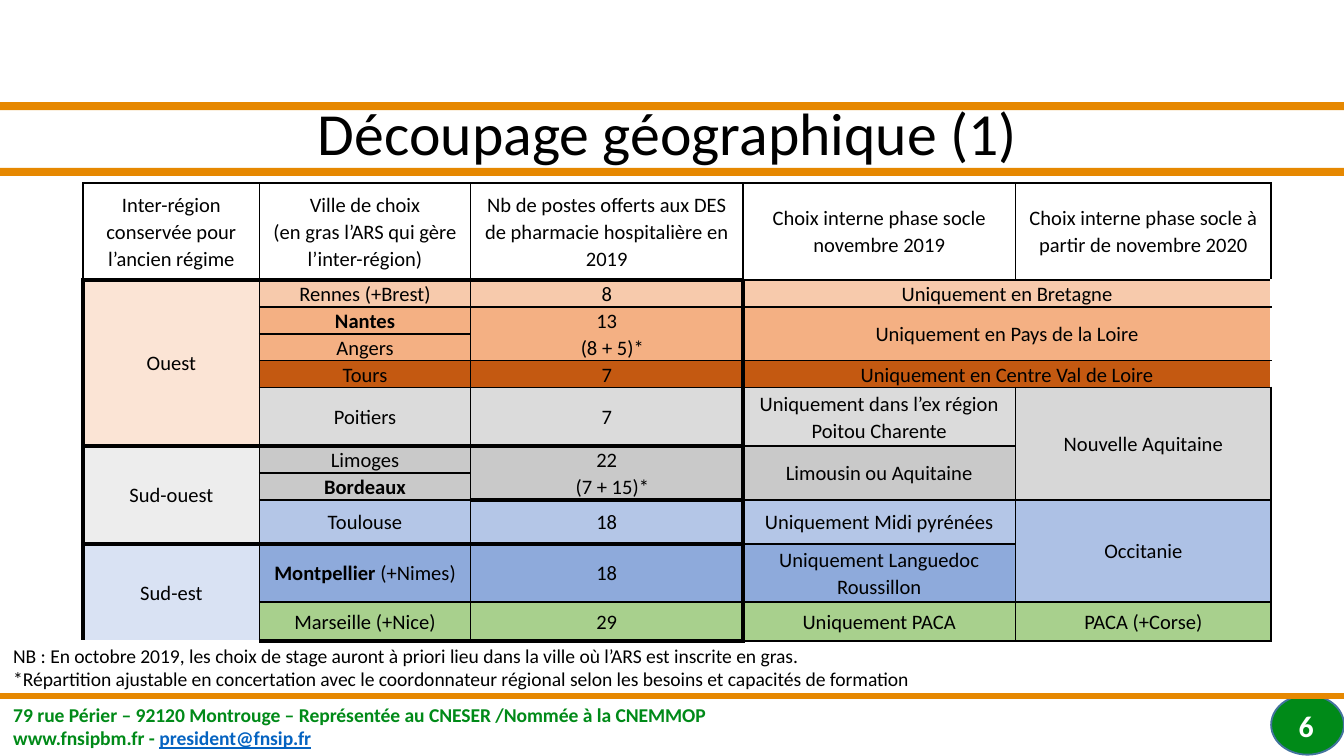
from lxml.etree import SubElement
from pptx import Presentation
from pptx.dml.color import RGBColor
from pptx.enum.shapes import MSO_CONNECTOR, MSO_SHAPE
from pptx.enum.text import MSO_ANCHOR, PP_ALIGN
from pptx.oxml.ns import qn
from pptx.util import Pt

COLORS = {
    "black": "000000", "white": "FFFFFF", "orange": "E68801", "green": "008A18",
    "badge_line": "43739E", "link": "0563C1",
    "ouest": "FBE4D5", "bretagne": "F7CAAC", "loire": "F4B083", "centre": "C45911",
    "poitou": "DBDBDB", "nouvelle_aquitaine": "D7D7D7", "sud_ouest": "EDEDED",
    "limousin": "C9C9C9", "midi": "B4C6E7", "occitanie": "ADC1E5",
    "sud_est": "D9E2F3", "languedoc": "8EAADB", "paca": "A8D08D",
}
SLIDE_WIDTH, SLIDE_HEIGHT = 720, 405

COLUMN_WIDTHS = [94.5, 113, 146, 146, 137]
LINE_ROW = 14.4
ROW_HEIGHTS = [52, *[LINE_ROW] * 4, 31.4, *[LINE_ROW] * 2, 23.6, 31.1, 20.9]
REGION_EDGES = (1, 6, 9, 11)  # horizontal grid lines around the inter-regions
HEAVY_COLUMN_EDGES = (0, 3)

# row, column, rows spanned, columns spanned, fill, text (** marks bold)
CELLS = [
    (0, 0, 1, 1, "white", "Inter-région conservée pour l’ancien régime"),
    (0, 1, 1, 1, "white", "Ville de choix\n(en gras l’ARS qui gère l’inter-région)"),
    (0, 2, 1, 1, "white", "Nb de postes offerts aux DES de pharmacie hospitalière en 2019"),
    (0, 3, 1, 1, "white", "Choix interne phase socle novembre 2019"),
    (0, 4, 1, 1, "white", "Choix interne phase socle à partir de novembre 2020"),
    (1, 0, 5, 1, "ouest", "Ouest"),
    (1, 1, 1, 1, "bretagne", "Rennes (+Brest)"),
    (1, 2, 1, 1, "bretagne", "8"),
    (1, 3, 1, 2, "bretagne", "Uniquement en Bretagne"),
    (2, 1, 1, 1, "loire", "**Nantes**"),
    (2, 2, 2, 1, "loire", "13\n(8 + 5)*"),
    (2, 3, 2, 2, "loire", "Uniquement en Pays de la Loire"),
    (3, 1, 1, 1, "loire", "Angers"),
    (4, 1, 1, 1, "centre", "Tours"),
    (4, 2, 1, 1, "centre", "7"),
    (4, 3, 1, 2, "centre", "Uniquement en Centre Val de Loire"),
    (5, 1, 1, 1, "poitou", "Poitiers"),
    (5, 2, 1, 1, "poitou", "7"),
    (5, 3, 1, 1, "poitou", "Uniquement dans l’ex région Poitou Charente"),
    (5, 4, 3, 1, "nouvelle_aquitaine", "Nouvelle Aquitaine"),
    (6, 0, 3, 1, "sud_ouest", "Sud-ouest"),
    (6, 1, 1, 1, "limousin", "Limoges"),
    (6, 2, 2, 1, "limousin", "22\n(7 + 15)*"),
    (6, 3, 2, 1, "limousin", "Limousin ou Aquitaine"),
    (7, 1, 1, 1, "limousin", "**Bordeaux**"),
    (8, 1, 1, 1, "midi", "Toulouse"),
    (8, 2, 1, 1, "midi", "18"),
    (8, 3, 1, 1, "midi", "Uniquement Midi pyrénées"),
    (8, 4, 2, 1, "occitanie", "Occitanie"),
    (9, 0, 2, 1, "sud_est", "Sud-est"),
    (9, 1, 1, 1, "languedoc", "**Montpellier** (+Nimes)"),
    (9, 2, 1, 1, "languedoc", "18"),
    (9, 3, 1, 1, "languedoc", "Uniquement Languedoc Roussillon"),
    (10, 1, 1, 1, "paca", "Marseille (+Nice)"),
    (10, 2, 1, 1, "paca", "29"),
    (10, 3, 1, 1, "paca", "Uniquement PACA"),
    (10, 4, 1, 1, "paca", "PACA (+Corse)"),
]


def rgb(name):
    return RGBColor.from_string(COLORS[name])


def write_text(frame, text, size, color="black", bold=False, align=PP_ALIGN.LEFT,
               spacing=1.0, mark_color=None, underline_marked=False):
    """Write one paragraph per line; runs between ** are marked."""
    frame.word_wrap = True
    for index, line in enumerate(text.split("\n")):
        paragraph = frame.paragraphs[0] if index == 0 else frame.add_paragraph()
        paragraph.alignment = align
        paragraph.line_spacing = spacing
        if line.startswith("(") and line.endswith("*"):
            paragraph._p.get_or_add_pPr().set("marL", str(Pt(6)))
        for part, words in enumerate(line.split("**")):
            if not words:
                continue
            marked = part % 2 == 1
            run = paragraph.add_run()
            run.text = words
            run.font.name = "Calibri"
            run.font.size = Pt(size)
            run.font.bold = bold or marked
            run.font.underline = marked and underline_marked
            run.font.color.rgb = rgb(mark_color if marked and mark_color else color)


def add_box(slide, box, text, anchor=MSO_ANCHOR.TOP, **text_format):
    textbox = slide.shapes.add_textbox(*map(Pt, box))
    textbox.text_frame.vertical_anchor = anchor
    write_text(textbox.text_frame, text, **text_format)
    return textbox


def add_filled(slide, kind, box, color):
    shape = slide.shapes.add_shape(kind, *map(Pt, box))
    shape.shadow.inherit = False
    shape.fill.solid()
    shape.fill.fore_color.rgb = rgb(color)
    shape.line.fill.background()
    return shape


def add_header(slide, left, top, width, height):
    bar = 4.3
    for bar_top in (top, top + height - bar):
        add_filled(slide, MSO_SHAPE.RECTANGLE, (left, bar_top, width, bar), "orange")
    add_box(slide, (left - 2.16, top + bar, width, 28), "Découpage géographique (1)",
            MSO_ANCHOR.MIDDLE, size=32, align=PP_ALIGN.CENTER, spacing=0.9)


def add_footer(slide, left, top, width, height):
    # Page badge
    badge_left = left + width - 39
    badge = add_filled(slide, MSO_SHAPE.OVAL, (badge_left, top - 0.7, 39, height), "green")
    badge.line.color.rgb = rgb("badge_line")
    badge.line.width = Pt(1)

    # Address
    address = add_box(
        slide, (left, top, 397, height),
        "79 rue Périer – 92120 Montrouge – Représentée au CNESER /Nommée à la CNEMMOP\n"
        "www.fnsipbm.fr - **president@fnsip.fr**",
        size=10.5, color="green", bold=True, mark_color="link", underline_marked=True)
    address.fill.solid()
    address.fill.fore_color.rgb = rgb("white")

    # Rule and page number
    rule = slide.shapes.add_connector(
        MSO_CONNECTOR.STRAIGHT, Pt(left), Pt(top), Pt(left + width), Pt(top))
    rule.line.color.rgb = rgb("orange")
    rule.line.width = Pt(3)
    SubElement(rule._element.spPr, qn("a:effectLst"))
    add_box(slide, (badge_left, top + 3.6, 37.5, 24.5), "6", MSO_ANCHOR.MIDDLE,
            size=16, color="white", bold=True, align=PP_ALIGN.CENTER)


def add_border(cell, side, heavy):
    border = SubElement(cell._tc.get_or_add_tcPr(), qn(f"a:ln{side}"),
                        w=str(Pt(2.25 if heavy else 1)))
    fill = SubElement(border, qn("a:solidFill"))
    SubElement(fill, qn("a:srgbClr"), val=COLORS["black"])


def style_cell(cell, row, column, area, fill):
    """Draw the outer edges of the merged area, then fill the cell."""
    first_row, first_column, last_row, last_column = area
    if column == first_column:
        add_border(cell, "L", row > 0 and column in HEAVY_COLUMN_EDGES)
    if column == last_column:
        add_border(cell, "R", row > 0 and column + 1 in HEAVY_COLUMN_EDGES)
    if row == first_row:
        add_border(cell, "T", column < 3 and row in REGION_EDGES)
    if row == last_row:
        add_border(cell, "B", column < 3 and row + 1 in REGION_EDGES)
    cell.fill.solid()
    cell.fill.fore_color.rgb = rgb(fill)


def add_regions_table(slide, left, top):
    regions = slide.shapes.add_table(
        len(ROW_HEIGHTS), len(COLUMN_WIDTHS), Pt(left), Pt(top),
        Pt(sum(COLUMN_WIDTHS)), Pt(sum(ROW_HEIGHTS))).table
    regions.first_row = regions.horz_banding = False
    for column, width in zip(regions.columns, COLUMN_WIDTHS):
        column.width = Pt(width)
    for row, height in zip(regions.rows, ROW_HEIGHTS):
        row.height = Pt(height)

    for row, column, row_span, column_span, fill, text in CELLS:
        last_row, last_column = row + row_span - 1, column + column_span - 1
        cell = regions.cell(row, column)
        if row_span * column_span > 1:
            cell.merge(regions.cell(last_row, last_column))
        for r in range(row, last_row + 1):
            for c in range(column, last_column + 1):
                part = regions.cell(r, c)
                part.margin_left = part.margin_right = Pt(5)
                part.margin_top = part.margin_bottom = Pt(0)
                style_cell(part, r, c, (row, column, last_row, last_column), fill)
        cell.vertical_anchor = MSO_ANCHOR.MIDDLE
        write_text(cell.text_frame, text, size=11, align=PP_ALIGN.CENTER, spacing=1.07)


def add_notes(slide, left, top, width, height):
    add_box(slide, (left, top, width, height),
            "NB : En octobre 2019, les choix de stage auront à priori lieu dans la ville "
            "où l’ARS est inscrite en gras.\n"
            "*Répartition ajustable en concertation avec le coordonnateur régional selon "
            "les besoins et capacités de formation", size=10.5)


def main():
    presentation = Presentation()
    presentation.slide_width = Pt(SLIDE_WIDTH)
    presentation.slide_height = Pt(SLIDE_HEIGHT)
    slide = presentation.slides.add_slide(presentation.slide_layouts[6])
    add_footer(slide, 0, 373, SLIDE_WIDTH, 32)
    add_header(slide, 0, 54.7, SLIDE_WIDTH, 39.6)
    add_regions_table(slide, 44.6, 98)
    add_notes(slide, 0, 341.3, SLIDE_WIDTH, 32)
    presentation.save("out.pptx")


if __name__ == "__main__":
    main()
